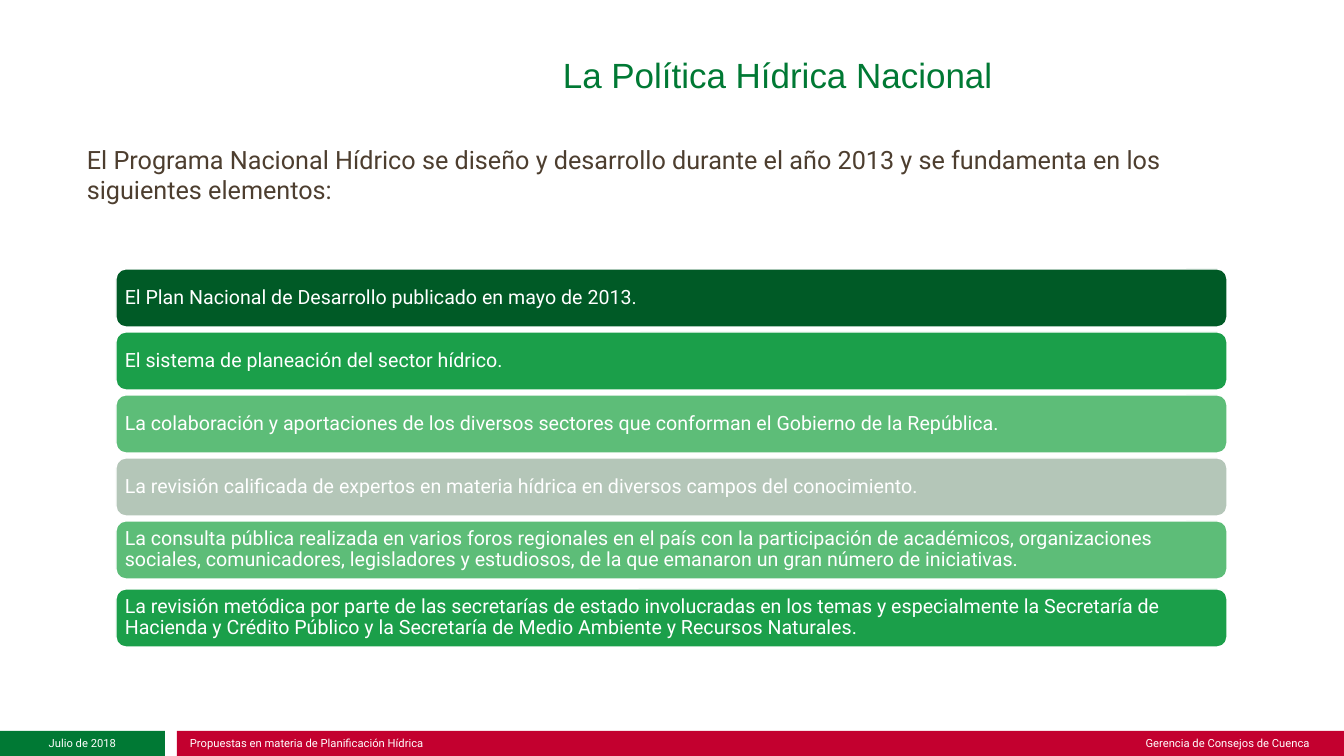
"""Build the slide on the national water policy, with its six foundations and footer."""
from pptx import Presentation
from pptx.dml.color import RGBColor
from pptx.enum.shapes import MSO_SHAPE
from pptx.enum.text import MSO_ANCHOR, MSO_AUTO_SIZE, PP_ALIGN
from pptx.util import Emu, Pt

SCALE = 914400 / 100.8
WHITE = RGBColor(0xFF, 0xFF, 0xFF)
GREEN = RGBColor(0x00, 0x79, 0x34)
RED = RGBColor(0xC3, 0x00, 0x2F)
BROWN = RGBColor(0x4D, 0x3E, 0x2F)
DARK_GREEN = RGBColor(0x00, 0x5A, 0x26)
MID_GREEN = RGBColor(0x1B, 0x9F, 0x4A)
LIGHT_GREEN = RGBColor(0x5D, 0xBD, 0x78)
GREY_GREEN = RGBColor(0xB4, 0xC6, 0xB8)

BAR_LEFT, BAR_TOP, BAR_WIDTH, BAR_HEIGHT = 116, 269, 1111, 58
BAR_PITCH, LAST_BAR_DROP = 63, 5
FOOTER_TOP, FOOTER_HEIGHT = 731, 25

INTRODUCTION = (
    "El Programa Nacional Hídrico se diseño y desarrollo durante el año 2013 "
    "y se fundamenta en los siguientes elementos:"
)
FOUNDATIONS = [
    ("El Plan Nacional de Desarrollo publicado en mayo de 2013.", DARK_GREEN),
    ("El sistema de planeación del sector hídrico.", MID_GREEN),
    ("La colaboración y aportaciones de los diversos sectores que conforman "
     "el Gobierno de la República.", LIGHT_GREEN),
    ("La revisión calificada de expertos en materia hídrica en diversos campos "
     "del conocimiento.", GREY_GREEN),
    ("La consulta pública realizada en varios foros regionales en el país con la "
     "participación de académicos, organizaciones sociales, comunicadores, "
     "legisladores y estudiosos, de la que emanaron un gran número de iniciativas.",
     LIGHT_GREEN),
    ("La revisión metódica por parte de las secretarías de estado involucradas en "
     "los temas y especialmente la Secretaría de Hacienda y Crédito Público y la "
     "Secretaría de Medio Ambiente y Recursos Naturales.", MID_GREEN),
]
FOOTER_BLOCKS = [(0, 165, GREEN), (177, 1167, RED)]
FOOTER_LABELS = [
    ("Julio de 2018", 0, 165, PP_ALIGN.CENTER),
    ("Propuestas en materia de Planificación Hídrica", 180, 492, PP_ALIGN.LEFT),
    ("Gerencia de Consejos de Cuenca", 828, 492, PP_ALIGN.RIGHT),
]


def px(length):
    """Turn pixels into EMU."""
    return Emu(round(length * SCALE))


def set_all(target, values):
    """Set each named attribute of the target."""
    for name, value in values.items():
        setattr(target, name, value)


def write(box, text, size, color, font="Roboto", frame_format=None, para_format=None):
    """Put one formatted paragraph into a box."""
    frame = box.text_frame
    set_all(frame, {"word_wrap": True, "auto_size": MSO_AUTO_SIZE.NONE,
                    **(frame_format or {})})
    para = frame.paragraphs[0]
    set_all(para, {"alignment": PP_ALIGN.LEFT, **(para_format or {})})
    span = para.add_run()
    span.text = text
    set_all(span.font, {"name": font, "size": Pt(size)})
    span.font.color.rgb = color


def add_block(page, preset, left, top, width, height, fill):
    """Add a flat filled shape without a line."""
    block = page.shapes.add_shape(preset, *map(px, (left, top, width, height)))
    block.shadow.inherit = False
    block.fill.solid()
    block.fill.fore_color.rgb = fill
    block.line.fill.background()
    return block


def add_label(page, text, left, top, width, height, size, color, **formats):
    """Add a text box."""
    box = page.shapes.add_textbox(*map(px, (left, top, width, height)))
    write(box, text, size, color, **formats)


def add_title(page, text):
    """Place and format the title."""
    title = page.shapes.title
    set_all(title, {"left": px(261), "top": px(50), "width": px(1033), "height": px(51)})
    write(title, text, 25, GREEN, "Arial", {"vertical_anchor": MSO_ANCHOR.BOTTOM},
          {"alignment": PP_ALIGN.CENTER})


def add_foundations(page):
    """Stack the foundation bars, the last one slightly apart."""
    for row, (text, fill) in enumerate(FOUNDATIONS):
        drop = LAST_BAR_DROP if row == len(FOUNDATIONS) - 1 else 0
        bar = add_block(page, MSO_SHAPE.ROUNDED_RECTANGLE, BAR_LEFT,
                        BAR_TOP + row * BAR_PITCH + drop, BAR_WIDTH, BAR_HEIGHT, fill)
        bar.line.color.rgb = WHITE
        bar.line.width = Pt(1)
        margins = {f"margin_{side}": px(6) for side in ("left", "top", "right", "bottom")}
        write(bar, text, 14, WHITE,
              frame_format={"vertical_anchor": MSO_ANCHOR.MIDDLE, **margins},
              para_format={"line_spacing": 0.9})


def add_footer(page):
    """Draw the footer blocks and their labels."""
    for left, width, fill in FOOTER_BLOCKS:
        add_block(page, MSO_SHAPE.RECTANGLE, left, FOOTER_TOP, width, FOOTER_HEIGHT, fill)
    for text, left, width, alignment in FOOTER_LABELS:
        add_label(page, text, left, FOOTER_TOP, width, FOOTER_HEIGHT, 8, WHITE,
                  frame_format={"vertical_anchor": MSO_ANCHOR.MIDDLE},
                  para_format={"alignment": alignment})


def main():
    """Build and save the deck."""
    deck = Presentation()
    set_all(deck, {"slide_width": px(1344), "slide_height": px(756)})
    page = deck.slides.add_slide(deck.slide_layouts[5])
    add_footer(page)
    add_title(page, "La Política Hídrica Nacional")
    add_label(page, INTRODUCTION, 77, 139, 1190, 72, 18, BROWN)
    add_foundations(page)
    deck.save("out.pptx")


if __name__ == "__main__":
    main()
